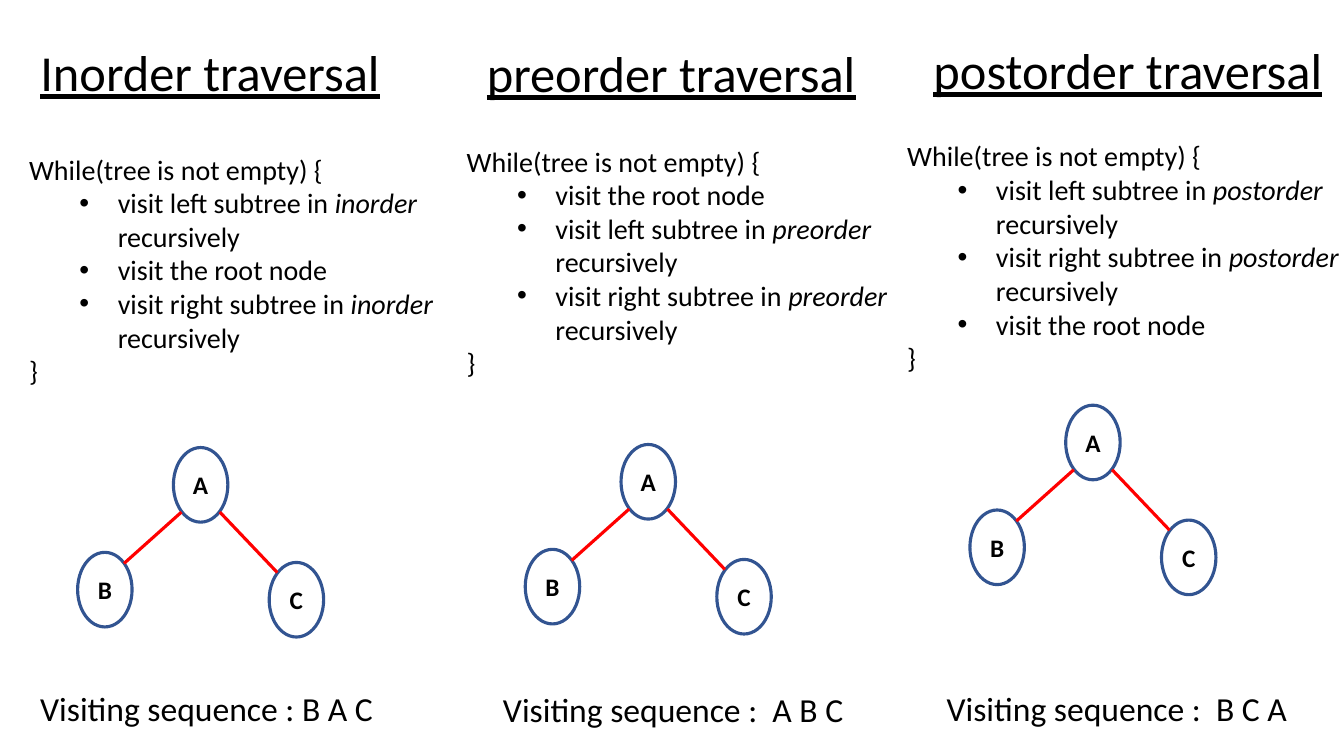
from lxml import etree
from pptx import Presentation
from pptx import util as u
from pptx.dml.color import RGBColor
from pptx.enum import shapes, text
from pptx.oxml.ns import qn

COLORS = {"text": "000000", "node": "325491", "edge": "FF0000"}
NODE_WIDTH, NODE_HEIGHT = 0.54, 0.74
# Offsets from the top left corner of node A
NODES = {"A": (0, 0), "B": (-0.95, 1.04), "C": (0.95, 1.14)}
EDGES = [((0.08, 0.64), (-0.49, 1.15)), ((0.46, 0.64), (1.03, 1.24))]

ROOT = "visit the root node"
LEFT = "visit left subtree in "
RIGHT = "visit right subtree in "

# Boxes are left, top, width, height; tree is the corner of node A
TRAVERSALS = [
    {"order": "Inorder", "steps": [LEFT, ROOT, RIGHT], "sequence": " B A C",
     "title": (0.3, 0.44, 4.42, 0.61), "spacing": 0.9,
     "code": (0.19, 1.46, 4.24, 2.46), "tree": (1.72, 4.44),
     "result": (0.3, 6.78, 3.53, 0.5)},
    {"order": "preorder", "steps": [ROOT, LEFT, RIGHT], "sequence": "  A B C",
     "title": (4.73, 0.47, 4.42, 0.61), "spacing": 0.8,
     "code": (4.53, 1.38, 4.42, 2.46), "tree": (6.16, 4.41),
     "result": (4.89, 6.79, 3.66, 0.5)},
    {"order": "postorder", "steps": [LEFT, RIGHT, ROOT], "sequence": "  B C A",
     "title": (9.16, 0.44, 4.42, 0.61), "spacing": 0.8,
     "code": (8.9, 1.33, 4.53, 2.46), "tree": (10.57, 4.02),
     "result": (9.29, 6.78, 3.66, 0.5)},
]


def add_run(paragraph, words, size, **styles):
    run = paragraph.add_run()
    run.text = words
    run.font.name = "Calibri"
    run.font.size = u.Pt(size)
    run.font.color.rgb = RGBColor.from_string(COLORS["text"])
    for style, value in styles.items():
        setattr(run.font, style, value)


def add_growing_box(box):
    """Add a wrapping text box that grows with its text; return its frame."""
    frame = slide.shapes.add_textbox(*map(u.Inches, box)).text_frame
    frame.word_wrap = True
    frame.auto_size = text.MSO_AUTO_SIZE.SHAPE_TO_FIT_TEXT
    return frame


presentation = Presentation()
presentation.slide_width = u.Inches(13.33)
presentation.slide_height = u.Inches(7.5)
slide = presentation.slides.add_slide(presentation.slide_layouts[5])

for index, traversal in enumerate(TRAVERSALS):
    # Heading
    box = [u.Inches(value) for value in traversal["title"]]
    if index == 0:
        heading = slide.shapes.title
        heading.left, heading.top, heading.width, heading.height = box
    else:
        heading = slide.shapes.add_textbox(*box)
    frame = heading.text_frame
    frame.word_wrap = True
    frame.auto_size = text.MSO_AUTO_SIZE.NONE
    frame.vertical_anchor = text.MSO_ANCHOR.MIDDLE
    paragraph = frame.paragraphs[0]
    paragraph.alignment = text.PP_ALIGN.LEFT
    paragraph.line_spacing = traversal["spacing"]
    add_run(paragraph, traversal["order"] + " traversal", 36, underline=True)

    # Algorithm
    frame = add_growing_box(traversal["code"])
    add_run(frame.paragraphs[0], "While(tree is not empty) {", 20)
    for step in traversal["steps"]:
        paragraph = frame.add_paragraph()
        paragraph.level = 1
        properties = paragraph._p.get_or_add_pPr()
        properties.set("marL", str(u.Inches(0.88)))
        properties.set("indent", str(u.Inches(-0.38)))
        etree.SubElement(properties, qn("a:buFont"), typeface="Arial")
        etree.SubElement(properties, qn("a:buChar"), char="•")
        add_run(paragraph, step, 20)
        if step != ROOT:
            add_run(paragraph, traversal["order"].lower(), 20, italic=True)
            add_run(paragraph, " recursively", 20)
    add_run(frame.add_paragraph(), "}", 20)

    # Tree
    tree = slide.shapes.add_group_shape()
    left, top = traversal["tree"]
    for label, (x, y) in NODES.items():
        node = tree.shapes.add_shape(
            shapes.MSO_SHAPE.OVAL, u.Inches(left + x), u.Inches(top + y),
            u.Inches(NODE_WIDTH), u.Inches(NODE_HEIGHT))
        node.shadow.inherit = False
        node.fill.background()
        node.line.color.rgb = RGBColor.from_string(COLORS["node"])
        node.line.width = u.Pt(2.25)
        frame = node.text_frame
        frame.vertical_anchor = text.MSO_ANCHOR.MIDDLE
        paragraph = frame.paragraphs[0]
        paragraph.alignment = text.PP_ALIGN.CENTER
        add_run(paragraph, label, 18, bold=True)
    for (x1, y1), (x2, y2) in EDGES:
        edge = tree.shapes.add_connector(
            shapes.MSO_CONNECTOR.STRAIGHT,
            u.Inches(left + x1), u.Inches(top + y1),
            u.Inches(left + x2), u.Inches(top + y2))
        edge.line.color.rgb = RGBColor.from_string(COLORS["edge"])
        edge.line.width = u.Pt(2.25)
        etree.SubElement(edge._element.spPr, qn("a:effectLst"))

    # Result
    frame = add_growing_box(traversal["result"])
    add_run(frame.paragraphs[0], "Visiting sequence :" + traversal["sequence"], 24)

presentation.save("out.pptx")
